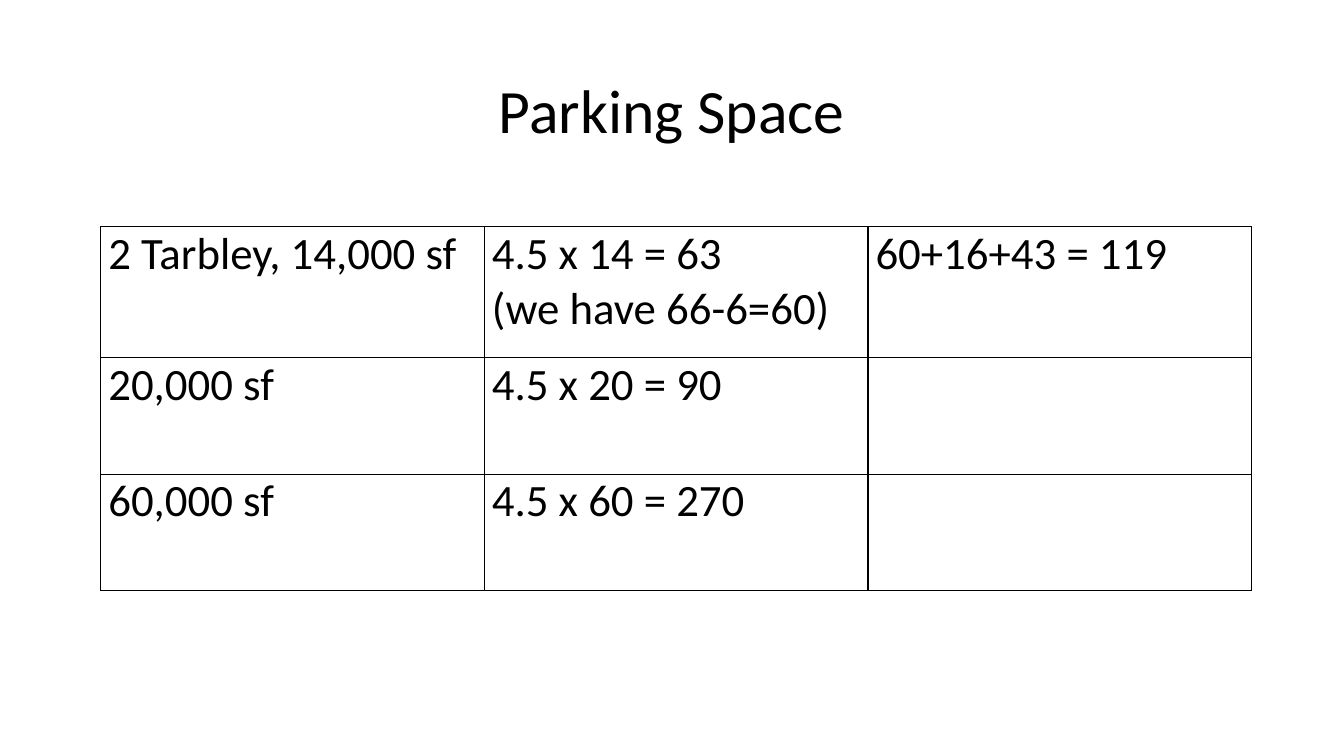
from dataclasses import dataclass

from lxml.etree import SubElement
from pptx import Presentation
from pptx.dml.color import RGBColor
from pptx.enum.text import MSO_ANCHOR, PP_ALIGN
from pptx.oxml.ns import qn
from pptx.util import Pt


@dataclass(frozen=True)
class Theme:
    """Colours, font and type sizes of the slide."""
    ink: str = "000000"
    paper: str = "FFFFFF"
    font: str = "Calibri"
    title_size: int = 44
    cell_size: int = 32
    border: int = 1
    cell_margin: float = 5.4


class SlideBuilder:
    """Draws styled elements on the current slide."""

    def __init__(self, slide, theme):
        """Keep the slide and its theme."""
        self.slide = slide
        self.theme = theme

    def style(self, paragraph, size):
        """Apply the theme's font to every run."""
        for run in paragraph.runs:
            run.font.name = self.theme.font
            run.font.size = Pt(size)
            run.font.color.rgb = RGBColor.from_string(self.theme.ink)

    def title(self, wording, left, top, width, height):
        """Add a centred heading."""
        heading = self.slide.shapes.add_textbox(
            Pt(left), Pt(top), Pt(width), Pt(height)).text_frame
        heading.word_wrap = True
        heading.vertical_anchor = MSO_ANCHOR.MIDDLE
        heading.text = wording
        line = heading.paragraphs[0]
        line.alignment = PP_ALIGN.CENTER
        line.line_spacing = 0.9
        self.style(line, self.theme.title_size)

    def outline(self, cell):
        """Draw a line on all four sides of a cell."""
        properties = cell._tc.get_or_add_tcPr()
        for side in ("a:lnL", "a:lnR", "a:lnT", "a:lnB"):
            edge = SubElement(properties, qn(side), w=str(Pt(self.theme.border)))
            fill = SubElement(edge, qn("a:solidFill"))
            SubElement(fill, qn("a:srgbClr"), val=self.theme.ink)

    def fill_cell(self, cell, wording):
        """Set the text and look of one cell."""
        cell.margin_left = cell.margin_right = Pt(self.theme.cell_margin)
        cell.margin_top = cell.margin_bottom = Pt(0)
        self.outline(cell)
        cell.fill.solid()
        cell.fill.fore_color.rgb = RGBColor.from_string(self.theme.paper)
        cell.text_frame.text = wording
        for line in cell.text_frame.paragraphs:
            self.style(line, self.theme.cell_size)

    def table(self, rows, left, top, column_width, row_heights):
        """Add a ruled table with equal columns."""
        grid = self.slide.shapes.add_table(
            len(rows), len(rows[0]), Pt(left), Pt(top),
            Pt(column_width * len(rows[0])), Pt(sum(row_heights))).table
        grid.first_row = grid.horz_banding = False
        for column in grid.columns:
            column.width = Pt(column_width)
        for row, height, wordings in zip(grid.rows, row_heights, rows):
            row.height = Pt(height)
            for cell, wording in zip(row.cells, wordings):
                self.fill_cell(cell, wording)


def main():
    """Build and save the parking slide."""
    deck = Presentation()
    deck.slide_width, deck.slide_height = Pt(960), Pt(540)
    parking = SlideBuilder(deck.slides.add_slide(deck.slide_layouts[6]), Theme())
    parking.title("Parking Space", 66, 28.75, 828, 104.4)
    parking_needs = [
        ("2 Tarbley, 14,000 sf", "4.5 x 14 = 63\n(we have 66-6=60)", "60+16+43 = 119"),
        ("20,000 sf", "4.5 x 20 = 90", ""),
        ("60,000 sf", "4.5 x 60 = 270", ""),
    ]
    parking.table(parking_needs, 72, 162, 274, (93.6, 83.2, 83.2))
    deck.save("out.pptx")


if __name__ == "__main__":
    main()
